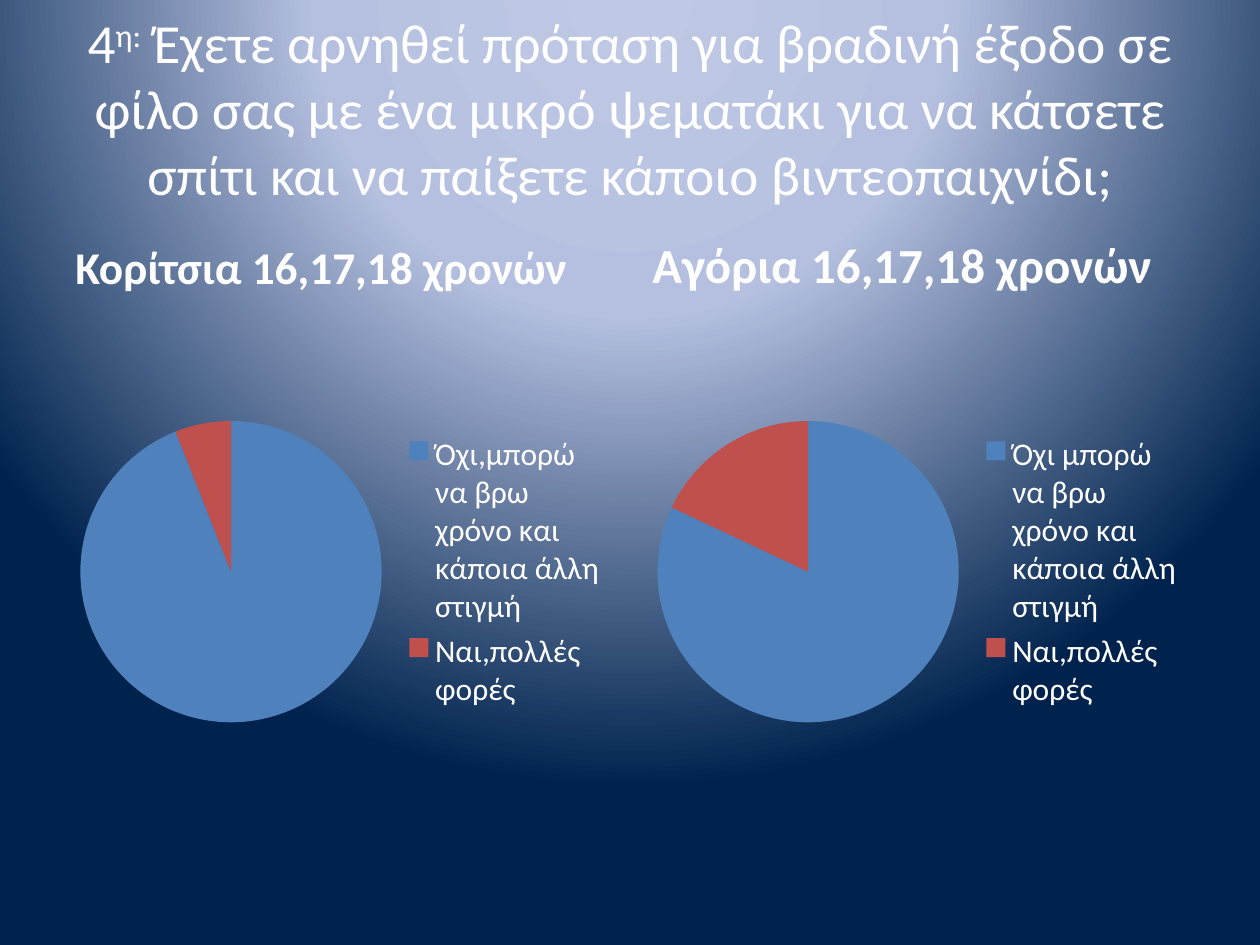
"""Build a survey slide with two pie charts under a question."""
import pptx
import pptx.util
import pptx.oxml
import pptx.oxml.ns
import pptx.chart.data
import pptx.dml.color
import pptx.enum.chart
import pptx.enum.text

HUES = {"text": "FFFFFF", "no": "4F81BD", "yes": "C0504D",
        "glow": "BFC9E5", "mid": "B5C0E0", "edge": "00234D"}
ALIGN = pptx.enum.text.PP_ALIGN
ANCHOR = pptx.enum.text.MSO_ANCHOR


class Deck:
    def __init__(self, wide, high, face):
        self.prs = pptx.Presentation()
        self.prs.slide_width = pptx.util.Inches(wide)
        self.prs.slide_height = pptx.util.Inches(high)
        self.face = face
        self.slide = self.prs.slides.add_slide(self.prs.slide_layouts[6])

    def box(self, left, top, width, height):
        wide, high = self.prs.slide_width, self.prs.slide_height
        return [round(n) for n in (left * wide, top * high, width * wide, height * high)]

    def hue(self, name):
        return pptx.dml.color.RGBColor.from_string(HUES[name])

    def style(self, font, size, bold=False):
        font.name, font.size, font.bold = self.face, pptx.util.Pt(size), bold
        font.color.rgb = self.hue("text")

    def glow(self, stops):
        self.slide.background.fill.solid()
        prop = self.slide.element.find(".//" + pptx.oxml.ns.qn("p:bgPr"))
        marks = "".join(f'<a:gs pos="{pos * 1000}"><a:srgbClr val="{HUES[name]}"/></a:gs>'
                        for pos, name in stops)
        grad = pptx.oxml.parse_xml(
            f'<a:gradFill {pptx.oxml.ns.nsdecls("a")} rotWithShape="1"><a:gsLst>{marks}</a:gsLst>'
            '<a:path path="circle"><a:fillToRect l="50000" t="-80000" r="50000" b="180000"/>'
            '</a:path></a:gradFill>')
        prop.replace(prop[0], grad)

    def text(self, area, runs, size, bold=False, align=ALIGN.LEFT, anchor=ANCHOR.BOTTOM):
        frame = self.slide.shapes.add_textbox(*self.box(*area)).text_frame
        frame.word_wrap = True
        frame.vertical_anchor = anchor
        para = frame.paragraphs[0]
        para.alignment = align
        self.style(para.font, size, bold)
        for words, lift in runs:
            run = para.add_run()
            run.text = words
            if lift:
                run.font._element.set("baseline", str(lift * 1000))

    def pie(self, area, cats, vals):
        data = pptx.chart.data.CategoryChartData()
        data.categories = cats
        data.add_series("Series 1", vals)
        kind = pptx.enum.chart.XL_CHART_TYPE.PIE
        chart = self.slide.shapes.add_chart(kind, *self.box(*area), data).chart
        self.style(chart.font, 18)
        chart.has_title = False
        chart.has_legend = True
        chart.legend.position = pptx.enum.chart.XL_LEGEND_POSITION.RIGHT
        chart.legend.include_in_layout = False
        plot = chart.plots[0]
        plot.vary_by_categories = True
        for spot, name in enumerate(("no", "yes")):
            fill = plot.series[0].points[spot].format.fill
            fill.solid()
            fill.fore_color.rgb = self.hue(name)


def main():
    deck = Deck(10, 7.5, "Calibri")
    deck.glow([(0, "glow"), (40, "mid"), (100, "edge")])
    ask = (" Έχετε αρνηθεί πρόταση για βραδινή έξοδο σε φίλο σας με ένα μικρό "
           "ψεματάκι για να κάτσετε σπίτι και να παίξετε κάποιο βιντεοπαιχνίδι;")
    deck.text((0.05, 0.04, 0.9, 0.148), [("4", 0), ("η:", 30), (ask, 0)], 31.5,
              align=ALIGN.CENTER, anchor=ANCHOR.MIDDLE)
    rest = "μπορώ να βρω χρόνο και κάποια άλλη στιγμή"
    width, top, head, body = 0.442, 0.224, 0.093, 0.576
    groups = [(0.05, "Κορίτσια", 25.9, "Όχι,", (94, 6)),
              (0.95 - width, "Αγόρια", 28, "Όχι ", (82, 18))]
    for left, who, size, no, vals in groups:
        deck.text((left, top, width, head), [(f"{who} 16,17,18 χρονών", 0)], size, bold=True)
        deck.pie((left, top + head, width, body), [no + rest, "Ναι,πολλές φορές"], vals)
    deck.prs.save("out.pptx")


if __name__ == "__main__":
    main()
